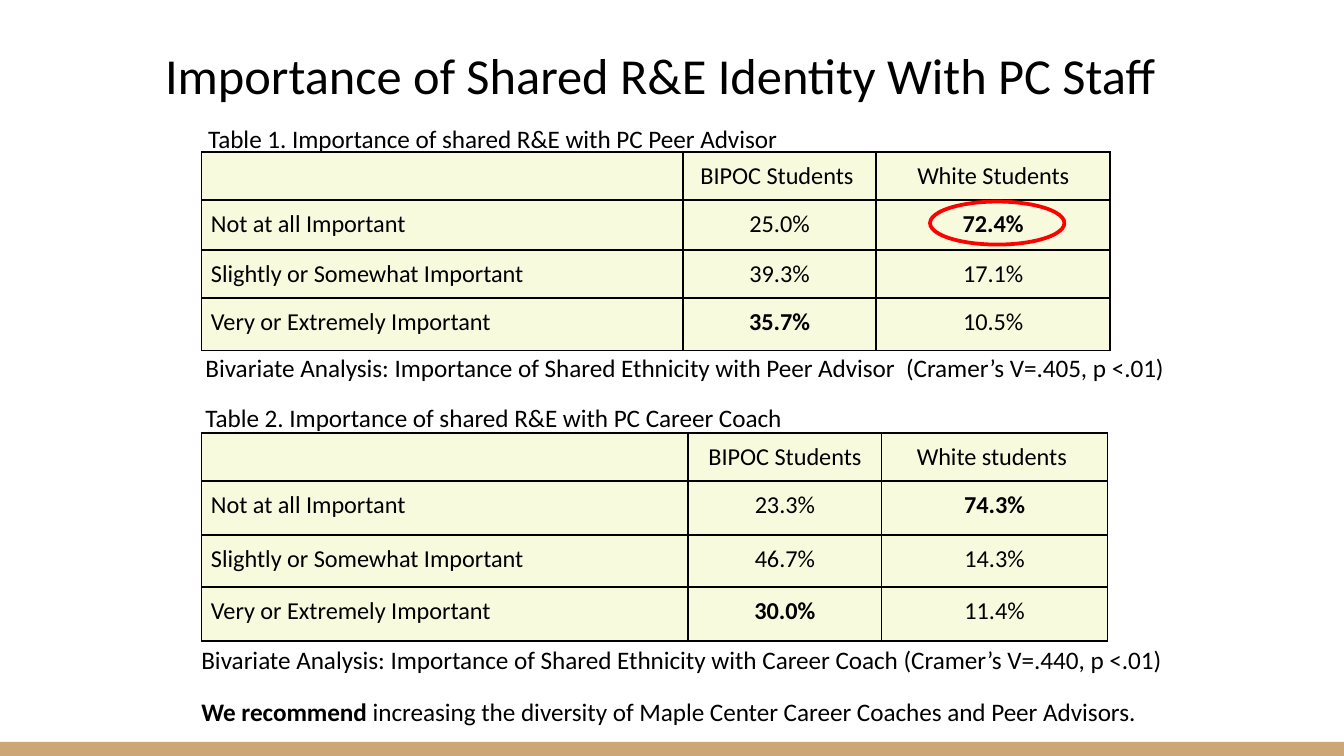
import pptx
import pptx.dml.color
import pptx.enum.shapes
import pptx.enum.text
import pptx.oxml
import pptx.oxml.ns
import pptx.util

Inches, Pt = pptx.util.Inches, pptx.util.Pt
ALIGN = pptx.enum.text.PP_ALIGN
ANCHOR = pptx.enum.text.MSO_ANCHOR
SHAPE = pptx.enum.shapes.MSO_SHAPE

COLORS = {"text": "000000", "cell": "F8FADD", "border": "000000",
          "bar": "CCA677", "mark": "FF0000"}
FONT = "Calibri"
TITLE, BODY, CELL = 27, 13.5, 13
LABELS = ["Not at all Important", "Slightly or Somewhat Important",
          "Very or Extremely Important"]


def rgb(name):
    return pptx.dml.color.RGBColor.from_string(COLORS[name])


def add_run(p, text, size=BODY, bold=False):
    r = p.add_run()
    r.text = text
    r.font.name, r.font.size, r.font.bold = FONT, Pt(size), bold
    r.font.color.rgb = rgb("text")


def add_text_box(s, left, top, width, height, anchor=ANCHOR.MIDDLE, bottom=0.1):
    sp = s.shapes.add_textbox(Inches(left), Inches(top), Inches(width), Inches(height))
    tf = sp.text_frame
    tf.word_wrap = True
    tf.vertical_anchor = anchor
    tf.margin_left = tf.margin_right = tf.margin_top = Inches(0.1)
    tf.margin_bottom = Inches(bottom)
    return tf


def add_heading(s, left, top, width, height, title, caption):
    """Slide title with the caption of the first table below it."""
    tf = add_text_box(s, left, top, width, height, ANCHOR.BOTTOM)
    add_run(tf.paragraphs[0], title, TITLE)
    p = tf.add_paragraph()
    p.space_before = Pt(10)
    p._p.get_or_add_pPr().set("marL", str(Inches(0.32)))
    add_run(p, caption)


def add_notes(s, left, top, width, height, lines, bottom=0.1):
    """Lines of body text; each is a list of (text, bold)."""
    tf = add_text_box(s, left, top, width, height, bottom=bottom)
    for i, line in enumerate(lines):
        p = tf.add_paragraph() if i else tf.paragraphs[0]
        p.line_spacing = 1.15
        p.space_before = Pt(8.4 if i else 0)
        for text, bold in line:
            add_run(p, text, bold=bold)


def add_borders(cell):
    tc_pr = cell._tc.get_or_add_tcPr()
    for i, side in enumerate(("lnL", "lnR", "lnT", "lnB")):
        tc_pr.insert(i, pptx.oxml.parse_xml(
            f'<a:{side} {pptx.oxml.ns.nsdecls("a")} w="{Pt(1)}"><a:solidFill>'
            f'<a:srgbClr val="{COLORS["border"]}"/></a:solidFill></a:{side}>'))


def add_results(s, left, top, widths, heights, header, values):
    """Results table; the highlighted values are in bold."""
    rows = [["", *header]] + [[label, *pair] for label, pair in zip(LABELS, values)]
    table = s.shapes.add_table(len(rows), len(widths), Inches(left), Inches(top),
                               Inches(sum(widths)), Inches(sum(heights))).table
    table.first_row = table.horz_banding = False
    for col, width in zip(table.columns, widths):
        col.width = Inches(width)
    for i, (row, height) in enumerate(zip(rows, heights)):
        table.rows[i].height = Inches(height)
        for j, text in enumerate(row):
            cell = table.cell(i, j)
            cell.fill.solid()
            cell.fill.fore_color.rgb = rgb("cell")
            add_borders(cell)
            cell.margin_left = cell.margin_right = Inches(0.07)
            cell.margin_top = cell.margin_bottom = Inches(0.07 if text else 0)
            p = cell.text_frame.paragraphs[0]
            p.alignment = ALIGN.CENTER if j else ALIGN.LEFT
            if text:
                add_run(p, text, CELL, (i, j) in ((1, 2), (3, 1)))


def add_highlight(s, left, top, width, height):
    sp = s.shapes.add_shape(SHAPE.OVAL, Inches(left), Inches(top), Inches(width), Inches(height))
    sp.shadow.inherit = False
    sp.fill.background()
    sp.line.color.rgb = rgb("mark")
    sp.line.width = Pt(2)


def add_bar(s, left, top, width, height):
    sp = s.shapes.add_shape(SHAPE.RECTANGLE, Inches(left), Inches(top), Inches(width), Inches(height))
    sp.shadow.inherit = False
    sp.fill.solid()
    sp.fill.fore_color.rgb = rgb("bar")
    sp.line.fill.background()


def main():
    prs = pptx.Presentation()
    prs.slide_width = Inches(10)
    prs.slide_height = prs.slide_width * 9 // 16
    s = prs.slides.add_slide(prs.slide_layouts[6])

    add_bar(s, 0, 5.52, 10, 0.11)
    add_heading(s, 1.13, 0.16, 7.73, 1.08,
                "Importance of Shared R&E Identity With PC Staff",
                "Table 1. Importance of shared R&E with PC Peer Advisor")

    # Peer advisor
    add_results(s, 1.5, 1.13, [3.58, 1.44, 1.74], [0.36, 0.37, 0.36, 0.39],
                ["BIPOC Students ", "White Students"],
                [("25.0%", "72.4%"), ("39.3%", "17.1%"), ("35.7%", "10.5%")])
    add_notes(s, 1.43, 2.68, 8.05, 0.69,
              [[("Bivariate Analysis: Importance of Shared Ethnicity with "
                 "Peer Advisor  (Cramer’s V=.405, p <.01)", False)],
               [("Table 2. Importance of shared R&E with PC Career Coach", False)]],
              bottom=0.34)

    # Career coach
    add_results(s, 1.5, 3.22, [3.62, 1.44, 1.68], [0.36, 0.4, 0.39, 0.4],
                ["BIPOC Students", "White students "],
                [("23.3%", "74.3%"), ("46.7%", "14.3%"), ("30.0%", "11.4%")])
    add_notes(s, 1.4, 4.66, 7.49, 0.46,
              [[("Bivariate Analysis: Importance of Shared Ethnicity with "
                 "Career Coach (Cramer’s V=.440, p <.01)", False)]])

    # Recommendation
    add_notes(s, 1.4, 5.05, 8.07, 0.46,
              [[("We recommend ", True),
                ("increasing the diversity of Maple Center Career Coaches "
                 "and Peer Advisors.", False)]])
    add_highlight(s, 6.92, 1.5, 1, 0.32)
    prs.save("out.pptx")


if __name__ == "__main__":
    main()
